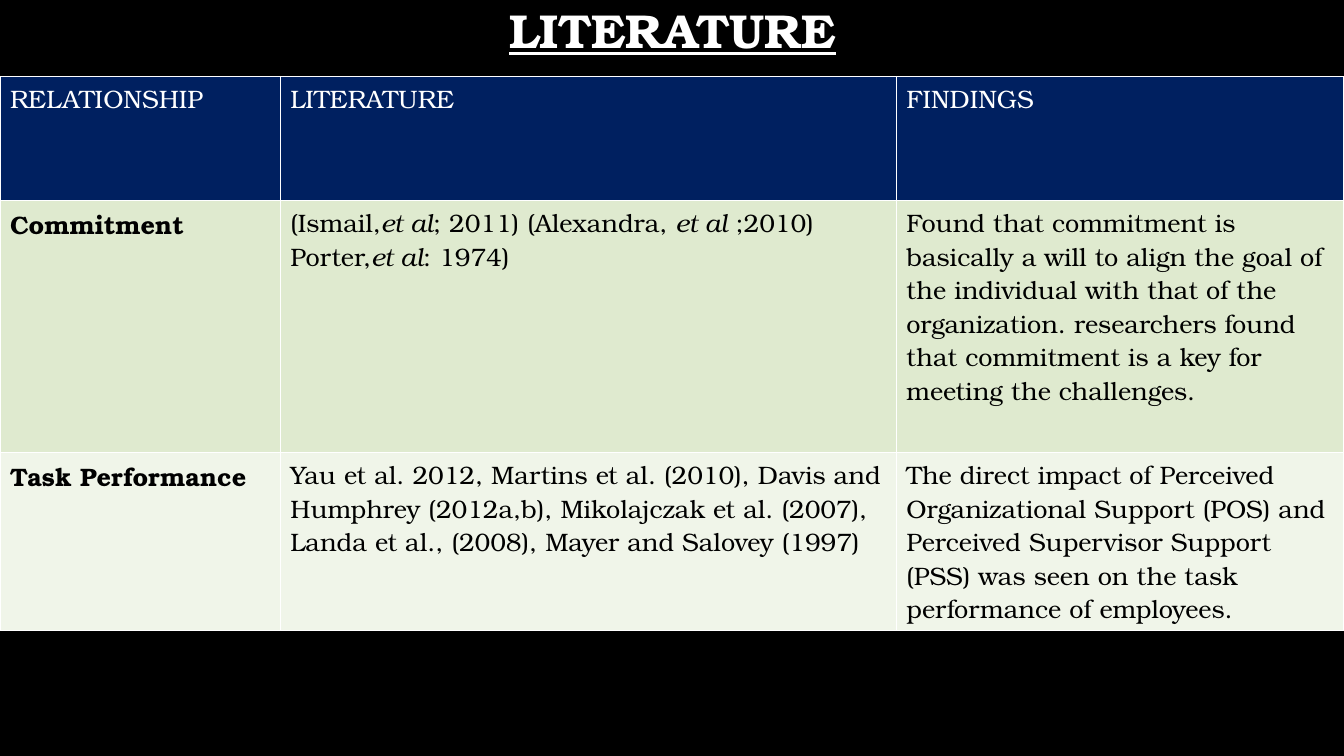
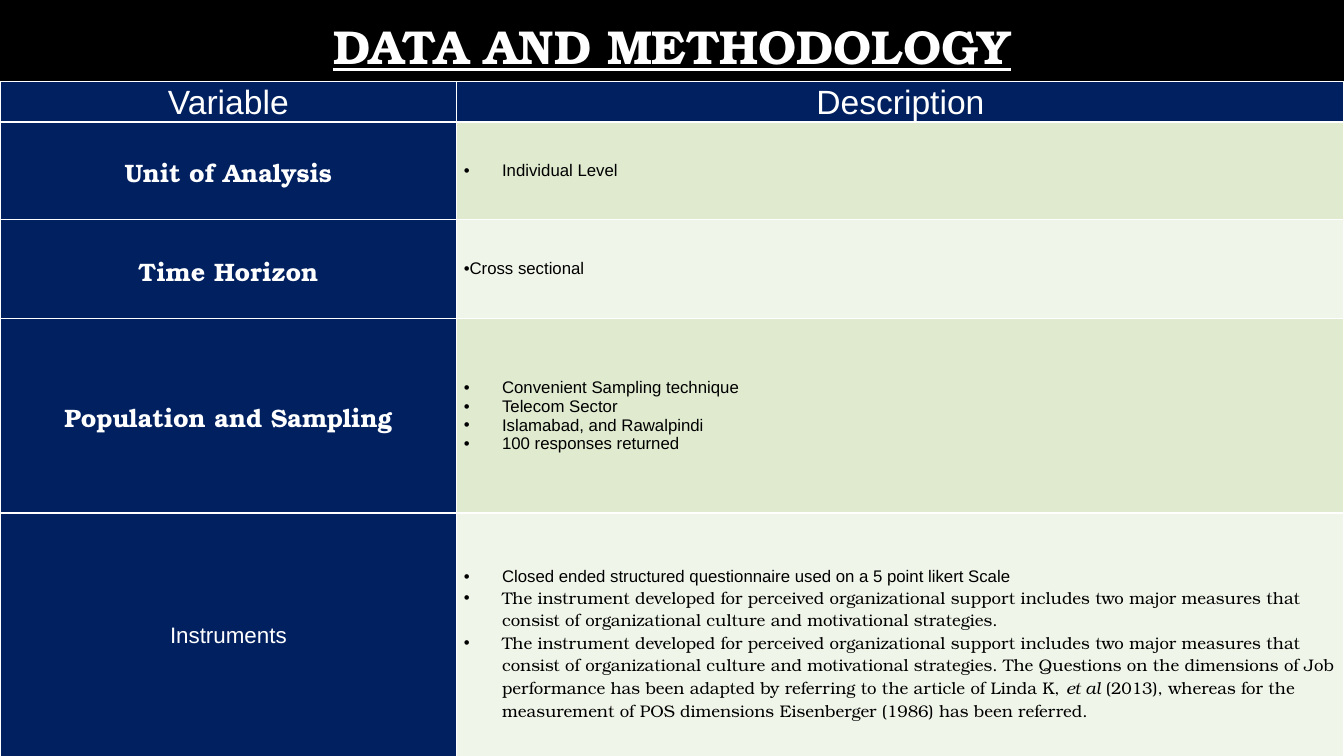
"""Build the literature and methodology table slides."""
from dataclasses import dataclass

from lxml import etree
from pptx import Presentation
from pptx.dml.color import RGBColor
from pptx.enum.text import MSO_ANCHOR, MSO_AUTO_SIZE, PP_ALIGN
from pptx.oxml.ns import qn
from pptx.util import Inches, Pt

LEFT, CENTER = PP_ALIGN.LEFT, PP_ALIGN.CENTER
TOP, MIDDLE = MSO_ANCHOR.TOP, MSO_ANCHOR.MIDDLE
NO_FIT = MSO_AUTO_SIZE.NONE


@dataclass(frozen=True)
class Theme:
    black: str = "000000"
    white: str = "FFFFFF"
    navy: str = "002060"
    bands: tuple = ("DFEACF", "F0F5E9")
    serif: str = "TeX Gyre Bonum"
    sans: str = "Arial"
    title: int = 34
    heading: int = 24
    text: int = 18
    label: int = 16
    item: int = 12
    border: int = 1


THEME = Theme()


def write(para, text, font=THEME.serif, size=THEME.text, color=THEME.black, bold=False,
          underline=False, align=LEFT, spacing=1.0, bullet=False, indent=0.0):
    """Write text into a paragraph, with *starred* parts in italics."""
    para.alignment, para.line_spacing = align, spacing
    for index, part in enumerate(text.split("*")):
        span = para.add_run()
        span.text = part
        span.font.name, span.font.size = font, Pt(size)
        span.font.bold, span.font.italic = bold, index % 2 == 1
        span.font.underline = underline
        span.font.color.rgb = RGBColor.from_string(color)
    if bullet:
        properties = para._p.get_or_add_pPr()
        properties.set("marL", str(Inches(indent)))
        properties.set("indent", str(-Inches(indent)))
        etree.SubElement(properties, qn("a:buFont"), typeface=THEME.sans)
        etree.SubElement(properties, qn("a:buChar"), char="•")


def style_cell(cell, fill, anchor, side, edge):
    """Set the fill, borders, anchor and margins of a table cell."""
    cell.vertical_anchor = anchor
    cell.margin_left = cell.margin_right = Inches(side)
    cell.margin_top = cell.margin_bottom = Inches(edge)
    properties = cell._tc.get_or_add_tcPr()
    for name in ("a:lnL", "a:lnR", "a:lnT", "a:lnB"):
        line = etree.SubElement(properties, qn(name), w=str(Pt(THEME.border)))
        paint = etree.SubElement(line, qn("a:solidFill"))
        etree.SubElement(paint, qn("a:srgbClr"), val=THEME.white)
    cell.fill.solid()
    cell.fill.fore_color.rgb = RGBColor.from_string(fill)


column_head = dict(color=THEME.white)
topic = dict(bold=True)
table_head = dict(font=THEME.sans, size=THEME.heading, color=THEME.white,
                  align=CENTER, spacing=1.07)
label = dict(color=THEME.white, bold=True, align=CENTER, spacing=1.07)
plain_label = dict(label, font=THEME.sans, size=THEME.label, bold=False)
item = dict(font=THEME.sans, size=THEME.item, bullet=True, indent=0.38)
flush_item = dict(item, indent=0)
serif_item = dict(item, font=THEME.serif)

MEASURES = ("The instrument developed for perceived organizational support includes two major "
            "measures that consist of organizational culture and motivational strategies.")

literature = [
    [[("RELATIONSHIP", column_head)], [("LITERATURE", column_head)],
     [("FINDINGS", column_head)]],
    [[("Commitment", topic)],
     [("(Ismail,*et al*; 2011) (Alexandra, *et al* ;2010) Porter,*et al*: 1974)", {})],
     [("Found that commitment is basically a will to align the goal of the individual with "
       "that of the organization. researchers found that commitment is a key for meeting "
       "the challenges.", {})]],
    [[("Task Performance", topic)],
     [("Yau et al. 2012, Martins et al. (2010), Davis and Humphrey (2012a,b), Mikolajczak "
       "et al. (2007), Landa et al., (2008), Mayer and Salovey (1997)", {})],
     [("The direct impact of Perceived Organizational Support (POS) and "
       "Perceived Supervisor Support (PSS) was seen on the task performance of "
       "employees.", {})]],
]
methodology = [
    [[("Variable", table_head)], [("Description", table_head)]],
    [[("Unit of Analysis", label)], [("Individual Level", item)]],
    [[("Time Horizon", label)], [("Cross sectional", flush_item)]],
    [[("Population and Sampling", label)],
     [("Convenient Sampling technique", item), ("Telecom Sector", item),
      ("Islamabad, and Rawalpindi", item), ("100 responses returned", item)]],
    [[("Instruments", plain_label)],
     [("Closed ended structured questionnaire used on a 5 point likert Scale", item),
      (MEASURES, serif_item),
      (MEASURES + " The Questions on the dimensions of Job performance has been adapted by "
       "referring to the article of Linda K, *et al* (2013), whereas for the measurement of "
       "POS dimensions Eisenberger (1986) has been referred.", serif_item)]],
]

pages = [
    dict(title="LITERATURE", title_box=(0.92, 0, 11.5, 0.66), top=0.76,
         widths=(2.78, 6.11, 4.44), heights=(1.23, 2.5, 1.7), content=literature,
         navy_columns=0, cell=dict(anchor=TOP, side=0.1, edge=0.05)),
    dict(title="DATA AND METHODOLOGY", title_box=(0, 0, 13.33, 0.98), top=0.81,
         widths=(4.53, 8.8), heights=(0.4, 0.97, 0.98, 1.93, 2.42), content=methodology,
         navy_columns=1, cell=dict(anchor=MIDDLE, side=0.07, edge=0)),
]

deck = Presentation()
deck.slide_width, deck.slide_height = Inches(13.33), Inches(7.5)
backdrop = deck.slide_master.background.fill
backdrop.solid()
backdrop.fore_color.rgb = RGBColor.from_string(THEME.black)

for page in pages:
    slide = deck.slides.add_slide(deck.slide_layouts[5])
    title = slide.shapes.title
    title.left, title.top, title.width, title.height = map(Inches, page["title_box"])
    title.text_frame.vertical_anchor = MIDDLE
    title.text_frame.auto_size = NO_FIT
    write(title.text_frame.paragraphs[0], page["title"], size=THEME.title,
          color=THEME.white, bold=True, underline=True, align=CENTER, spacing=0.9)

    widths, heights = page["widths"], page["heights"]
    table = slide.shapes.add_table(
        len(heights), len(widths), Inches(0), Inches(page["top"]),
        Inches(sum(widths)), Inches(sum(heights))).table
    table.horz_banding = False
    for column, width in zip(table.columns, widths):
        column.width = Inches(width)
    for row, height in zip(table.rows, heights):
        row.height = Inches(height)

    for row_index, row_content in enumerate(page["content"]):
        for column_index, entries in enumerate(row_content):
            cell = table.cell(row_index, column_index)
            is_navy = row_index == 0 or column_index < page["navy_columns"]
            fill = THEME.navy if is_navy else THEME.bands[(row_index - 1) % 2]
            style_cell(cell, fill, **page["cell"])
            frame = cell.text_frame
            for entry_index, (text, style) in enumerate(entries):
                para = frame.add_paragraph() if entry_index else frame.paragraphs[0]
                write(para, text, **style)

instruments = table.cell(len(heights) - 1, 1)
instruments.margin_top = Inches(0.19)

deck.save("out.pptx")
